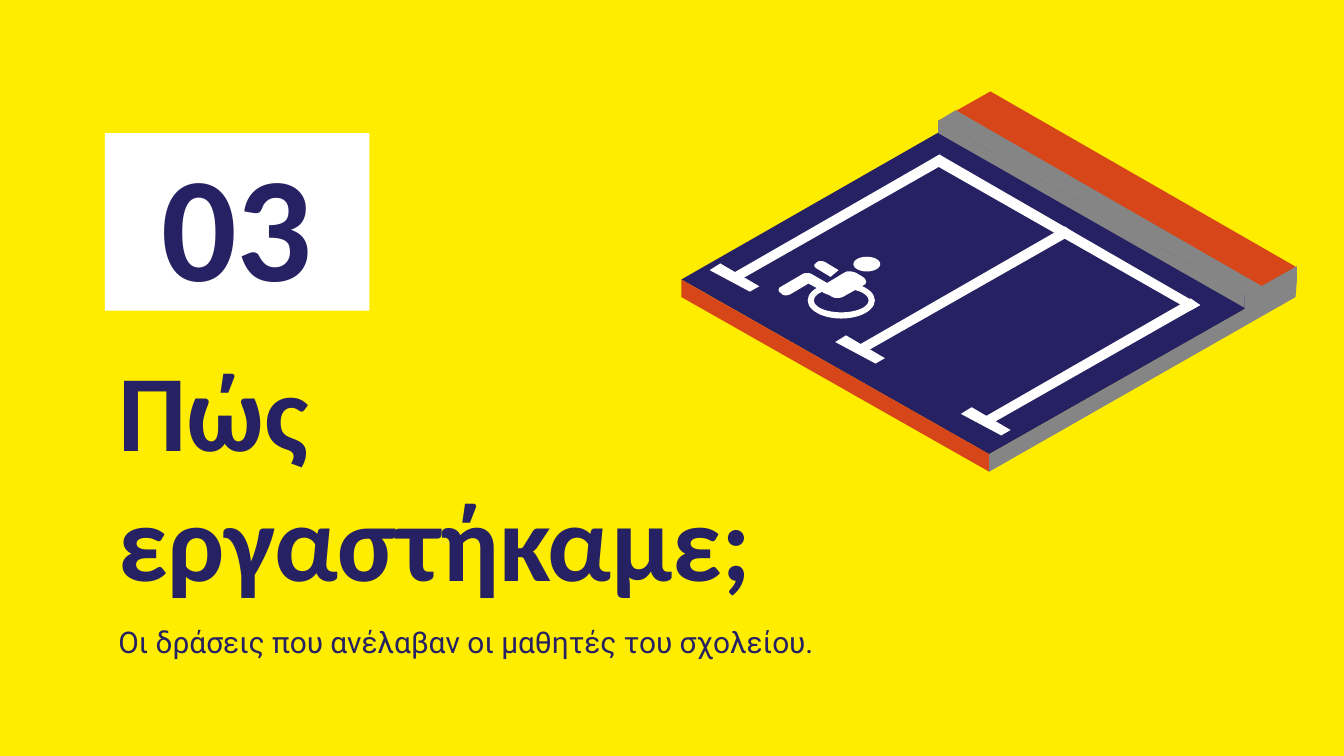
import pptx
import pptx.util
import pptx.dml.color
import pptx.enum.shapes
import pptx.enum.text
from dataclasses import dataclass

SHAPE = pptx.enum.shapes.MSO_SHAPE
ALIGN = pptx.enum.text.PP_ALIGN
ANCHOR = pptx.enum.text.MSO_ANCHOR


@dataclass(frozen=True)
class Theme:
    yellow: str = "FFED00"
    navy: str = "262162"
    orange: str = "D74618"
    grey: str = "858585"
    white: str = "FFFFFF"
    heading_font: str = "Calibri"
    body_font: str = "Roboto"
    number_size: int = 80
    title_size: int = 58
    body_size: int = 16


THEME = Theme()
WIDTH = pptx.util.Inches(10)
HEIGHT = WIDTH * 9 // 16

# The illustration is drawn on a grid of this many columns and rows
COLS, ROWS = 458, 283
FINE = 10  # vertex steps per grid unit
BAYS = 3
BAY_STEP = (93.5, 53.5)

SLABS = [
    (THEME.navy, [(0, 140), (229, 270), (458, 140), (229, 9)]),  # deck
    (THEME.orange, [(229, 283), (0, 153), (0, 140), (229, 270)]),  # front edge
    (THEME.orange, [(191, 22), (419, 152), (458, 131), (230, 0)]),  # kerb top
    (THEME.grey, [(419, 161), (191, 31), (191, 22), (419, 152)]),  # kerb face
    (THEME.grey, [(458, 140), (458, 130), (419, 152), (419, 162),
                  (229, 270), (229, 283), (457, 153)]),  # right side
    (THEME.grey, [(191, 22), (419, 152), (432, 145), (204, 14)]),  # kerb strip
]
BAY_LINE = [(199, 52), (46, 139), (39, 135), (192, 47)]
BAY_FOOT = [(21, 133), (51, 149), (58, 145), (29, 128)]
REAR_LINE = [(184, 52), (379, 163), (386, 159), (192, 47)]

# Two numbers are a corner; six are a curve (two controls and an end)
FIGURE = [
    [(130, 135), (135, 138), (138, 140, 138, 143, 136, 144), (120, 153),
     (118, 154, 114, 154, 111, 152), (106, 150),
     (103, 148, 103, 145, 106, 144), (121, 135),
     (124, 133, 127, 134, 130, 135)],  # torso
    [(97, 136), (118, 148), (120, 149, 120, 151, 119, 152), (118, 153),
     (116, 154, 113, 154, 111, 152), (91, 141),
     (88, 139, 88, 138, 90, 137), (90, 136),
     (92, 135, 95, 135, 97, 136)],  # thigh
    [(107, 127), (117, 133), (111, 138), (101, 132),
     (99, 131, 98, 129, 100, 128), (101, 127),
     (102, 126, 105, 126, 107, 127)],  # arm
    [(73, 146), (90, 136), (92, 135, 95, 135, 97, 136), (98, 137),
     (100, 138, 100, 140, 98, 141), (81, 151),
     (79, 152, 76, 152, 75, 151), (74, 150),
     (72, 149, 72, 147, 73, 146)],  # leg
]
WHEEL = (94, 142, 50, 27)
HEAD = (128, 123, 20, 11)


def share(x, y, w, h):
    """Turn shares of the slide's size into a box."""
    return int(x * WIDTH), int(y * HEIGHT), int(w * WIDTH), int(h * HEIGHT)


def paint(s, color):
    s.shadow.inherit = False
    s.fill.solid()
    s.fill.fore_color.rgb = pptx.dml.color.RGBColor.from_string(color)
    s.line.fill.background()


def place(s, box):
    s.left, s.top, s.width, s.height = box


def write(s, text, font, size, bold, align, anchor):
    tf = s.text_frame
    tf.word_wrap = True
    tf.auto_size = pptx.enum.text.MSO_AUTO_SIZE.NONE
    tf.vertical_anchor = anchor
    tf.margin_left = tf.margin_right = pptx.util.Inches(0.1)
    tf.margin_top = tf.margin_bottom = pptx.util.Inches(0.1)
    p = tf.paragraphs[0]
    p.alignment = align
    p.line_spacing = 1.0
    p.space_before = pptx.util.Pt(0)
    r = p.add_run()
    r.text = text
    r.font.name = font
    r.font.size = pptx.util.Pt(size)
    r.font.bold = bold
    r.font.color.rgb = pptx.dml.color.RGBColor.from_string(THEME.navy)


def flatten(outline, steps=8):
    """Replace each cubic curve by short straight pieces."""
    points = []
    for part in outline:
        if len(part) == 2:
            points.append(part)
            continue
        nodes = [points[-1], part[:2], part[2:4], part[4:]]
        for i in range(1, steps + 1):
            t = i / steps
            weights = ((1 - t) ** 3, 3 * t * (1 - t) ** 2, 3 * t * t * (1 - t), t ** 3)
            points.append(tuple(sum(k * n[axis] for k, n in zip(weights, nodes))
                                for axis in (0, 1)))
    return points


def add_outline(shapes, box, outline, color, shift=(0, 0)):
    left, top, width, height = box
    points = [((x + shift[0]) * FINE, (y + shift[1]) * FINE)
              for x, y in flatten(outline)]
    scale = (width / COLS / FINE, height / ROWS / FINE)
    builder = shapes.build_freeform(*points[0], scale=scale)
    builder.add_line_segments(points[1:], close=True)
    paint(builder.convert_to_shape(left, top), color)


def add_round(shapes, box, kind, cell):
    left, top, width, height = box
    x, y, w, h = cell
    s = shapes.add_shape(kind, int(left + x * width / COLS), int(top + y * height / ROWS),
                         int(w * width / COLS), int(h * height / ROWS))
    paint(s, THEME.white)
    return s


def add_parking(slide, box):
    shapes = slide.shapes.add_group_shape().shapes
    # Ground and kerb
    for color, outline in SLABS:
        add_outline(shapes, box, outline, color)
    # Bay markings
    for i in range(BAYS):
        shift = (i * BAY_STEP[0], i * BAY_STEP[1])
        for outline in (BAY_LINE, BAY_FOOT):
            add_outline(shapes, box, outline, THEME.white, shift)
    add_outline(shapes, box, REAR_LINE, THEME.white)
    # Wheelchair sign
    wheel = add_round(shapes, box, SHAPE.DONUT, WHEEL)
    wheel.adjustments[0] = 0.17
    for outline in FIGURE:
        add_outline(shapes, box, outline, THEME.white)
    add_round(shapes, box, SHAPE.OVAL, HEAD)


def add_number(slide, box, text):
    s = slide.shapes.add_shape(SHAPE.RECTANGLE, *box)
    paint(s, THEME.white)
    write(s, text, THEME.heading_font, THEME.number_size, True, ALIGN.CENTER, ANCHOR.MIDDLE)


def add_heading(slide, title_box, subtitle_box, title, subtitle):
    s = slide.shapes.title
    place(s, title_box)
    write(s, title, THEME.heading_font, THEME.title_size, True, ALIGN.LEFT, ANCHOR.TOP)
    s = slide.placeholders[1]
    place(s, subtitle_box)
    write(s, subtitle, THEME.body_font, THEME.body_size, False, ALIGN.LEFT, ANCHOR.BOTTOM)


def main():
    prs = pptx.Presentation()
    prs.slide_width, prs.slide_height = WIDTH, HEIGHT
    slide = prs.slides.add_slide(prs.slide_layouts[0])
    fill = slide.background.fill
    fill.solid()
    fill.fore_color.rgb = pptx.dml.color.RGBColor.from_string(THEME.yellow)

    add_heading(slide, share(0.078, 0.436, 0.641, 0.35), share(0.078, 0.808, 0.615, 0.082),
                "Πώς εργαστήκαμε;", "Οι δράσεις που ανέλαβαν οι μαθητές του σχολείου.")
    add_number(slide, share(0.078, 0.176, 0.197, 0.235), "03")
    add_parking(slide, share(0.507, 0.121, 0.458, 0.503))
    prs.save("out.pptx")


if __name__ == "__main__":
    main()
